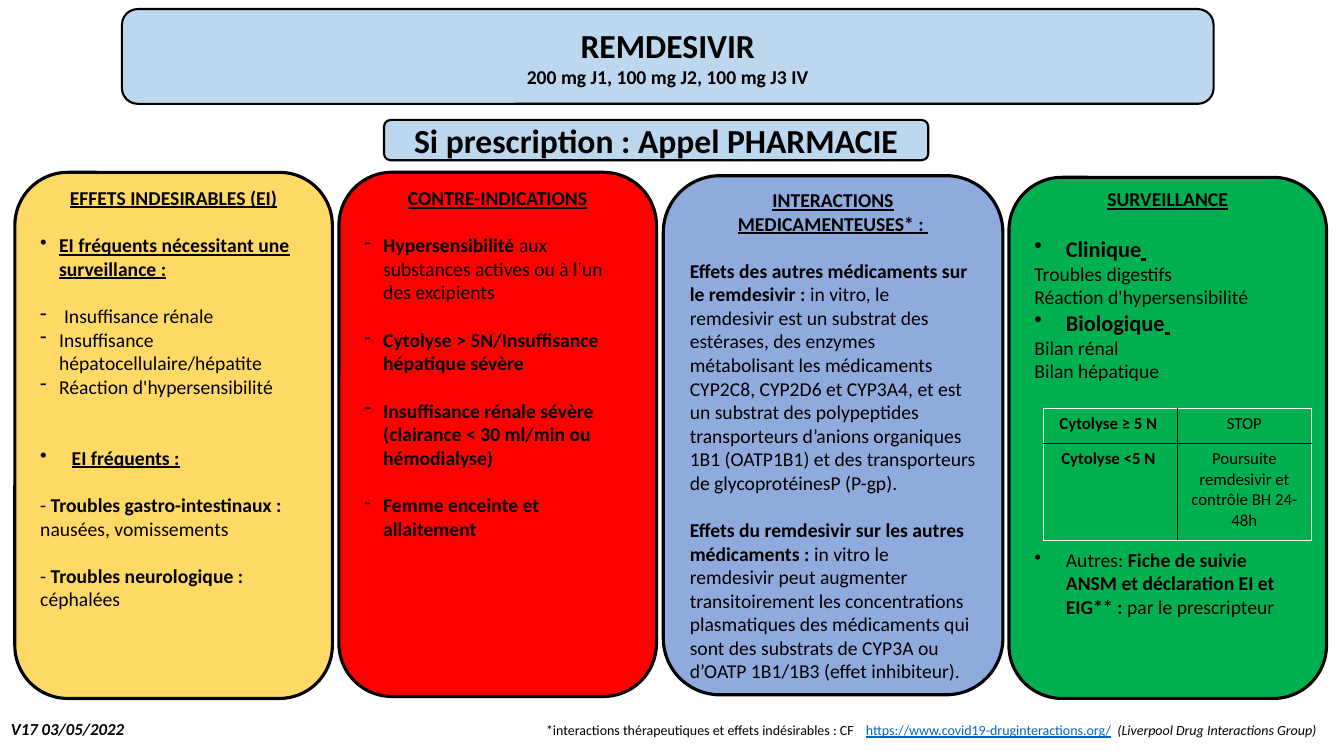
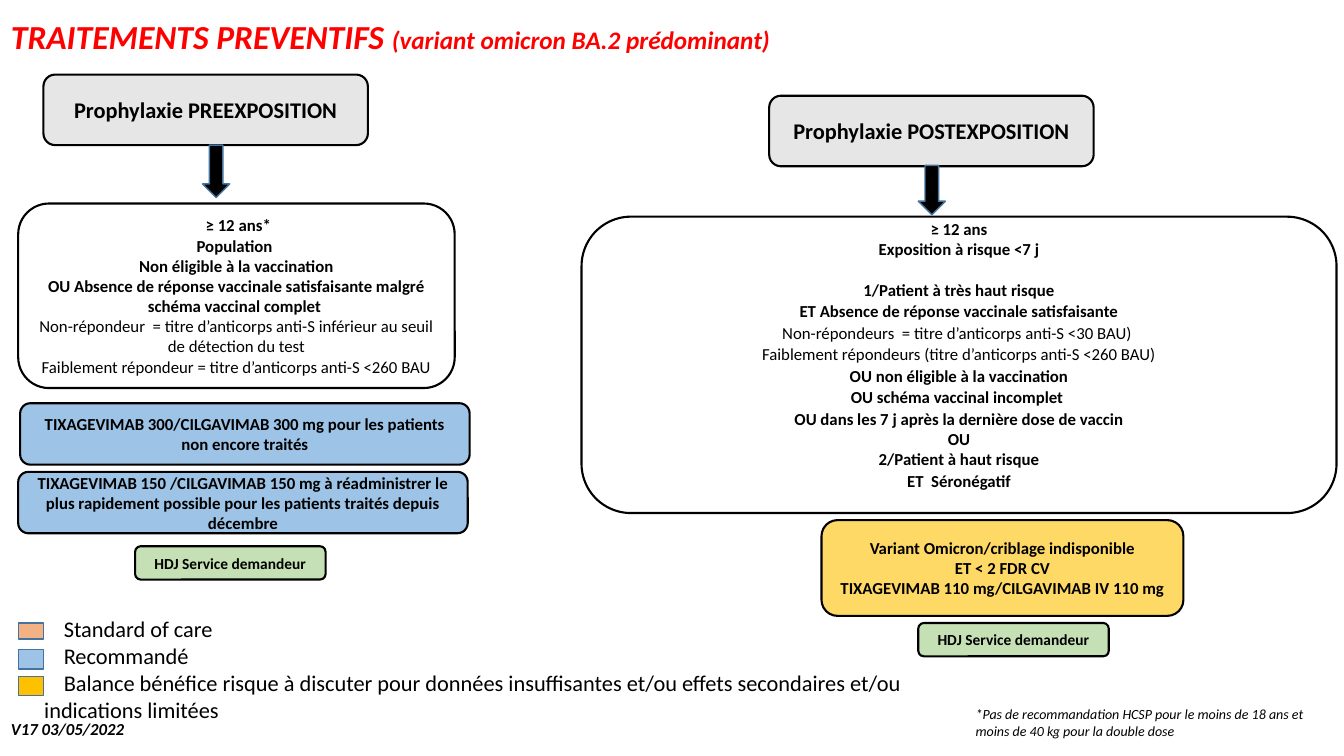
from lxml import etree
from pptx import Presentation
from pptx.dml.color import RGBColor
from pptx.enum.shapes import MSO_SHAPE as Preset
from pptx.enum.text import MSO_ANCHOR as Anchor, PP_ALIGN as Align
from pptx.oxml.ns import qn
from pptx.util import Pt

FONT = "Calibri"
VERSION = "V17 03/05/2022"
COLORS = {
    "black": "000000", "white": "FFFFFF", "red": "FF0000", "green": "00B050",
    "yellow": "FFD966", "periwinkle": "8FAADC", "pale blue": "BDD7EE",
    "blue": "9DC3E6", "grey": "E7E6E6", "pale green": "C5E0B4",
    "orange": "F4B183", "gold": "FFC000", "outline": "43739E", "link": "0563C1",
}
RGB = {name: RGBColor.from_string(value) for name, value in COLORS.items()}


def write(frame, paragraphs, size, style="", align=Align.LEFT, color="black"):
    """Each paragraph is a string, or (runs, options); style letters are b, i, u."""
    frame.word_wrap = True
    for index, item in enumerate(paragraphs):
        runs, options = (item, {}) if isinstance(item, str) else item
        if isinstance(runs, str):
            runs = [(runs, options.get("style", style))]
        paragraph = frame.paragraphs[0] if index == 0 else frame.add_paragraph()
        paragraph.alignment = options.get("align", align)
        paragraph.font.name = FONT
        paragraph.font.size = Pt(options.get("size", size))
        paragraph.font.color.rgb = RGB[color]
        if "gap" in options:
            paragraph.space_before = Pt(options["gap"])
        if "spacing" in options:
            paragraph.line_spacing = options["spacing"]
        properties = paragraph._p.get_or_add_pPr()
        if "first" in options:
            properties.set("marL", "0")
            properties.set("indent", str(Pt(options["first"])))
        if "marker" in options:
            hanging = Pt(options["hanging"])
            properties.set("marL", str(hanging))
            properties.set("indent", str(-hanging))
            bullet = etree.Element(qn("a:buChar"), char=options["marker"])
            defaults = properties.find(qn("a:defRPr"))
            defaults.addprevious(bullet)
        for text, letters in runs:
            run = paragraph.add_run()
            run.text = text
            run.font.bold = "b" in letters
            run.font.italic = "i" in letters
            run.font.underline = "u" in letters


def add_box(slide, place, preset=None, fill=None, line="black", weight=1.5):
    """Add a preset shape, or a text box when no preset is given."""
    place = [Pt(length) for length in place]
    if preset is None:
        return slide.shapes.add_textbox(*place)
    shape = slide.shapes.add_shape(preset, *place)
    shape.shadow.inherit = False
    if fill:
        shape.fill.solid()
        shape.fill.fore_color.rgb = RGB[fill]
    else:
        shape.fill.background()
    shape.line.color.rgb = RGB[line]
    shape.line.width = Pt(weight)
    return shape


presentation = Presentation()
presentation.slide_width, presentation.slide_height = Pt(960), Pt(540)
blank = presentation.slide_layouts[6]
treatment, prevention = [presentation.slides.add_slide(blank) for _ in range(2)]

# Version footer on both slides
for slide in (treatment, prevention):
    footer = add_box(slide, (0.7, 509.8, 110, 21.8))
    write(footer.text_frame, [VERSION], 12, "bi")

# Slide 1: header and call to action
header = add_box(treatment, (87.1, 6.5, 779.8, 67.7), Preset.ROUNDED_RECTANGLE, "pale blue")
write(header.text_frame, [("REMDESIVIR", {"size": 24}),
                          "200 mg J1, 100 mg J2, 100 mg J3 IV"], 14, "b", Align.CENTER)
call = add_box(treatment, (274.3, 85.7, 388.8, 28.8), Preset.ROUNDED_RECTANGLE, "pale blue")
write(call.text_frame, ["Si prescription : Appel PHARMACIE"], 24, "b", Align.CENTER)

# Slide 1: four columns (place, fill, space kept below the text, heading, body)
GAP = {"gap": 17}
DASH = {"marker": "-", "hanging": 13.5}
DOT = {"marker": "•", "hanging": 13.5}
WIDE_DOT = {"marker": "•", "hanging": 22.5}
columns = [
    ((10.6, 123.1, 226.8, 375.8), "yellow", 53, "EFFETS INDESIRABLES (EI)", [
        ("EI fréquents nécessitant une surveillance :", {**DOT, **GAP, "style": "bu"}),
        ("Insuffisance rénale", {**DASH, **GAP, "hanging": 17}),
        ("Insuffisance hépatocellulaire/hépatite", DASH),
        ("Réaction d'hypersensibilité", DASH),
        ("EI fréquents :", {**WIDE_DOT, "gap": 34, "style": "bu"}),
        ([("-", ""), (" Troubles gastro-intestinaux : ", "b"),
          ("nausées, vomissements", "")], GAP),
        ([("- ", ""), ("Troubles neurologique : ", "b"), ("céphalées", "")], GAP),
    ]),
    ((242.1, 123.1, 226.8, 374.4), "red", 102, "CONTRE-INDICATIONS", [
        ([("Hypersensibilité ", "b"),
          ("aux substances actives ou à l'un des excipients", "")], {**DASH, **GAP}),
        *[(text, {**DASH, **GAP, "style": "b"}) for text in (
            "Cytolyse > 5N/Insuffisance hépatique sévère",
            "Insuffisance rénale sévère (clairance < 30 ml/min ou hémodialyse)",
            "Femme enceinte et allaitement")],
    ]),
    ((473.8, 125.5, 242.6, 370.8), "periwinkle", 0, "INTERACTIONS MEDICAMENTEUSES* : ", [
        ([("Effets des autres médicaments sur le remdesivir : ", "b"),
          ("in vitro, le remdesivir est un substrat des estérases, des enzymes "
           "métabolisant les médicaments CYP2C8, CYP2D6 et CYP3A4, et est un substrat "
           "des polypeptides transporteurs d’anions organiques 1B1 (OATP1B1) et des "
           "transporteurs de glycoprotéinesP (P-gp).", "")], GAP),
        ([("Effets du remdesivir sur les autres médicaments : ", "b"),
          ("in vitro le remdesivir peut augmenter transitoirement les concentrations "
           "plasmatiques des médicaments qui sont des substrats de CYP3A ou "
           "d’OATP 1B1/1B3 (effet inhibiteur).", "")], GAP),
    ]),
    ((720.7, 126.7, 226.8, 372.2), "green", 50, "SURVEILLANCE", [
        ([("Clinique", "b"), (" ", "bu")], {**WIDE_DOT, **GAP, "size": 16}),
        "Troubles digestifs",
        "Réaction d'hypersensibilité",
        ([("Biologique", "b"), (" ", "bu")], {**WIDE_DOT, "size": 16}),
        "Bilan rénal",
        "Bilan hépatique",
        ([("Autres: ", ""), ("Fiche de suivie ANSM et déclaration EI et EIG** : ", "b"),
          ("par le prescripteur", "")], {**WIDE_DOT, "gap": 118}),
    ]),
]
for place, fill, space_below, heading, body in columns:
    column = add_box(treatment, place, Preset.ROUNDED_RECTANGLE, fill, weight=2.25)
    frame = column.text_frame
    frame.vertical_anchor = Anchor.MIDDLE
    frame.margin_top, frame.margin_bottom = 0, Pt(space_below)
    write(frame, [(heading, {"style": "bu", "align": Align.CENTER}), *body], 14)

# Slide 1: cytolysis table, black inner rules and a light frame
rows = [("Cytolyse ≥ 5 N ", "STOP"),
        ("Cytolyse <5 N ", "Poursuite remdesivir et contrôle BH 24-48h")]
table = treatment.shapes.add_table(2, 2, Pt(745.2), Pt(291.6), Pt(191.6), Pt(94.4)).table
table.first_row = table.horz_banding = False
for row, height in zip(table.rows, (25.3, 69.1)):
    row.height = Pt(height)
for row_index, texts in enumerate(rows):
    for column_index, text in enumerate(texts):
        cell = table.cell(row_index, column_index)
        write(cell.text_frame, [text], 12, "" if column_index else "b", Align.CENTER)
        inner = {"lnR" if column_index == 0 else "lnL", "lnB" if row_index == 0 else "lnT"}
        for side in ("lnL", "lnR", "lnT", "lnB"):
            border = etree.SubElement(cell._tc.get_or_add_tcPr(), qn(f"a:{side}"), w=str(Pt(1)))
            solid = etree.SubElement(border, qn("a:solidFill"))
            color = COLORS["black" if side in inner else "white"]
            etree.SubElement(solid, qn("a:srgbClr"), val=color)
        cell.fill.background()

# Slide 1: source of the interactions
note = add_box(treatment, (383, 511.9, 236, 19.4))
write(note.text_frame, ["*interactions thérapeutiques et effets indésirables : CF"], 10)
source = add_box(treatment, (611.4, 511.9, 348, 19.4))
write(source.text_frame, [([("https://www.covid19-druginteractions.org/", "u"), ("  ", ""),
                            ("(Liverpool Drug Interactions Group)", "i")], {})], 10)
source.text_frame.paragraphs[0].runs[0].font.color.rgb = RGB["link"]

# Slide 2: title
title = add_box(prevention, (0.7, 7.9, 715, 36))
write(title.text_frame, [([("TRAITEMENTS PREVENTIFS ", "bi"),
                           ("(variant omicron BA.2 prédominant)", "bi")], {})], 24, color="red")
title.text_frame.paragraphs[0].runs[1].font.size = Pt(18)

# Slide 2: boxes of both pathways (place, fill, size, space below, paragraphs)
PLAIN = {"style": ""}
LOOSE = {"spacing": 1.07}
pathway_boxes = [
    ((31, 53.3, 231.8, 50.4), "grey", 16, 3.6, ["Prophylaxie PREEXPOSITION"]),
    ((13, 145.4, 311.8, 131.8), None, 12, 3.6, [
        " ≥ 12 ans*", "Population ", "Non éligible à la vaccination",
        "OU Absence de réponse vaccinale satisfaisante malgré schéma vaccinal complet ",
        ("Non-répondeur  = titre d’anticorps anti-S inférieur au seuil de détection du test",
         PLAIN),
        ("Faiblement répondeur = titre d’anticorps anti-S <260 BAU", PLAIN)]),
    ((14.4, 288, 321.1, 43.9), "blue", 12, 3.6, [
        "TIXAGEVIMAB 300/CILGAVIMAB 300 mg pour les patients non encore traités"]),
    ((13, 337, 321.1, 43.9), "blue", 12, 3.6, [
        "TIXAGEVIMAB 150 /CILGAVIMAB 150 mg à réadministrer le plus rapidement "
        "possible pour les patients traités depuis décembre"]),
    ((96.5, 390.2, 136.1, 23.8), "pale green", 11, 3.6, ["HDJ Service demandeur"]),
    ((549.4, 68.4, 231.8, 50.4), "grey", 16, 3.6, ["Prophylaxie POSTEXPOSITION"]),
    ((415.4, 154.8, 539.3, 211.7), None, 12, 18, [
        "≥ 12 ans", "Exposition à risque <7 j",
        ("1/Patient à très haut risque", {"gap": 14.6}),
        ("ET Absence de réponse vaccinale satisfaisante", LOOSE),
        ("Non-répondeurs  = titre d’anticorps anti-S <30 BAU) ", {**LOOSE, **PLAIN}),
        ("Faiblement répondeurs (titre d’anticorps anti-S <260 BAU)", {**LOOSE, **PLAIN}),
        ("OU non éligible à la vaccination", LOOSE),
        ("OU schéma vaccinal incomplet ", LOOSE),
        ("OU dans les 7 j après la dernière dose de vaccin", LOOSE),
        "OU", "2/Patient à haut risque", ("ET  Séronégatif", LOOSE)]),
    ((586.8, 371.5, 258.5, 68.4), "yellow", 12, 3.6, [
        "Variant Omicron/criblage indisponible", "ET < 2 FDR CV",
        "TIXAGEVIMAB 110 mg/CILGAVIMAB IV 110 mg"]),
    ((655.9, 445, 136.1, 23.8), "pale green", 11, 3.6, ["HDJ Service demandeur"]),
]
for place, fill, size, space_below, paragraphs in pathway_boxes:
    box = add_box(prevention, place, Preset.ROUNDED_RECTANGLE, fill)
    box.text_frame.vertical_anchor = Anchor.MIDDLE
    box.text_frame.margin_bottom = Pt(space_below)
    write(box.text_frame, paragraphs, size, "b", Align.CENTER)

# Slide 2: block arrows
for place in ((144.7, 103.7, 19.4, 37.4), (655.9, 118.1, 19.4, 35.3)):
    add_box(prevention, place, Preset.DOWN_ARROW, "black", "outline", 1)

# Slide 2: legend
legend = add_box(prevention, (24.5, 436, 635.8, 88))
write(legend.text_frame, [(text, {"first": 14}) for text in (
    "Standard of care", "Recommandé",
    "Balance bénéfice risque à discuter pour données insuffisantes et/ou effets "
    "secondaires et/ou indications limitées")], 16)
for index, (fill, height) in enumerate((("orange", 11.5), ("blue", 13.7), ("gold", 13.7))):
    add_box(prevention, (13, 445 + 19.1 * index, 18, height), Preset.RECTANGLE,
            fill, "outline", 1)

# Slide 2: footnote
footnote = add_box(prevention, (689.8, 500.4, 254.2, 31.7))
write(footnote.text_frame, ["*Pas de recommandation HCSP pour le moins de 18 ans et "
                            "moins de 40 kg pour la double dose"], 10, "i")

presentation.save("out.pptx")
